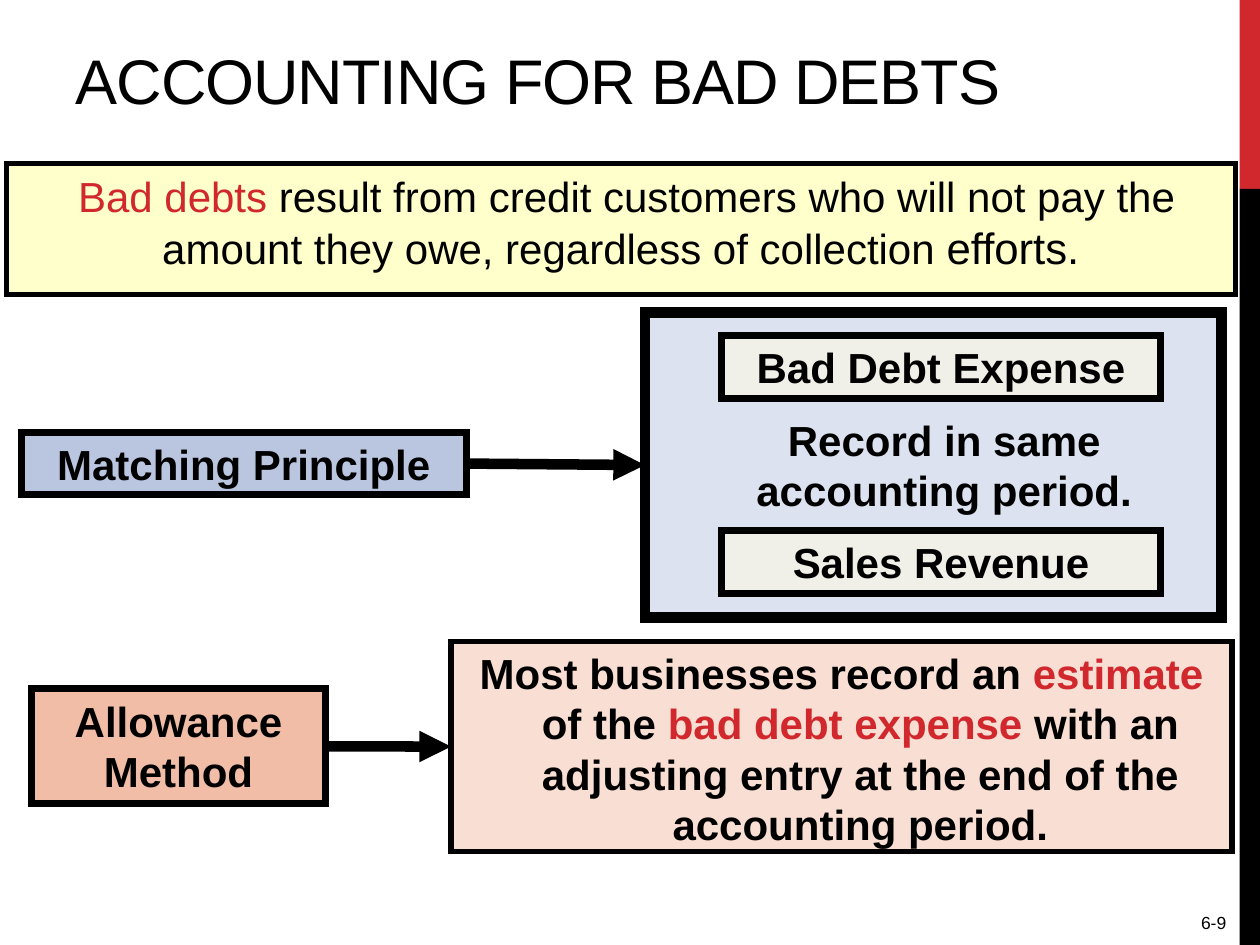
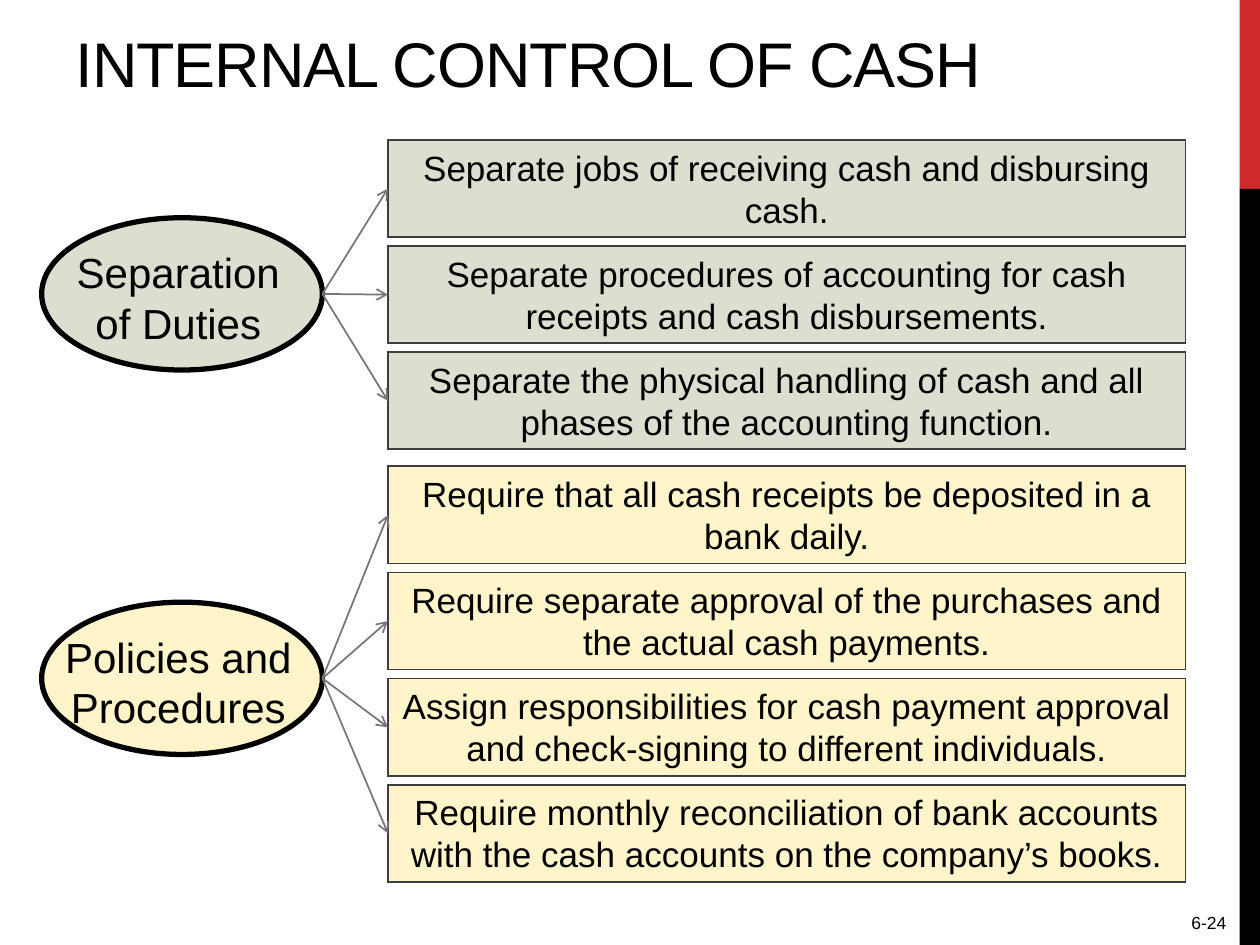
from dataclasses import dataclass

from lxml.etree import SubElement
from pptx import Presentation
from pptx.dml.color import RGBColor
from pptx.enum.shapes import MSO_CONNECTOR as Link, MSO_SHAPE as Kind
from pptx.enum.text import MSO_ANCHOR as Anchor, MSO_AUTO_SIZE as Fit, PP_ALIGN as Align
from pptx.oxml.ns import qn
from pptx.util import Cm, Pt


@dataclass(frozen=True)
class Theme:
    font: str = "Arial"
    ink: str = "000000"
    accent: str = "D1282E"
    outline: str = "3D3D3D"
    arrow: str = "777777"
    definition: str = "FFFFCC"
    panel: str = "DCE2EF"
    principle: str = "BAC5DF"
    account: str = "F0F0E9"
    allowance: str = "F1BDA7"
    estimate: str = "F8DED3"
    duties: str = "DEDED0"
    policies: str = "FFF4CA"
    title_size: int = 36
    label_size: int = 24
    emphasis_size: int = 25
    row_size: int = 20
    number_size: int = 10


THEME = Theme()
PAGE_SIZE = (25.4, 19.05)
BAND_LEFT, BAND_SPLIT = 24.99, 3.81
NUMBER_AREA = (20.32, 18.26, 4.65, 0.79)

DEBTS_TITLE = "ACCOUNTING FOR BAD DEBTS"
DEFINITION_AREA = (0.13, 3.3, 24.77, 2.64)
DEFINITION = [
    (" Bad debts ", THEME.accent, THEME.label_size),
    ("result from credit customers who will not pay the amount they owe, regardless of collection ",
     THEME.ink, THEME.label_size),
    ("efforts.", THEME.ink, THEME.emphasis_size),
]
DEBT_BOXES = {
    "panel": ("", (13, 6.3, 11.63, 6.15), THEME.panel, 6),
    "principle": ("Matching Principle", (0.43, 8.71, 8.97, 1.27), THEME.principle, 4),
    "expense": ("Bad Debt Expense", (14.55, 6.76, 8.84, 1.27), THEME.account, 4),
    "revenue": ("Sales Revenue", (14.55, 10.69, 8.84, 1.27), THEME.account, 4),
    "period": ("Record in same accounting period.", (13.94, 8.23, 10.19, 2.31), THEME.panel, 0),
    "allowance": ("Allowance Method", (0.64, 13.89, 5.92, 2.31), THEME.allowance, 4),
    "estimate": ("", (9.09, 12.93, 15.75, 4.24), THEME.estimate, 3),
}
ESTIMATE = [
    ("Most businesses record an ", THEME.ink),
    ("estimate", THEME.accent),
    (" of the", THEME.ink),
    (" bad debt expense ", THEME.accent),
    ("with an adjusting entry at the end of the accounting period.", THEME.ink),
]
DEBT_ARROWS = [("principle", "panel"), ("allowance", "estimate")]

CASH_TITLE = "INTERNAL CONTROL OF CASH"
CONTROLS = [
    ("Separation\nof Duties", THEME.duties, 4.39, 2.82, [
        "Separate jobs of receiving cash and disbursing cash.",
        "Separate procedures of accounting for cash receipts and cash disbursements.",
        "Separate the physical handling of cash and all phases of the accounting function.",
    ]),
    ("Policies and Procedures", THEME.policies, 12.14, 9.4, [
        "Require that all cash receipts be deposited in a bank daily.",
        "Require separate approval of the purchases and the actual cash payments.",
        "Assign responsibilities for cash payment approval and check-signing to different individuals.",
        "Require monthly reconciliation of bank accounts with the cash accounts on the company’s books.",
    ]),
]
OVAL_LEFT, OVAL_WIDTH, OVAL_HEIGHT = 0.84, 5.66, 3.07
LABEL_DROP, LABEL_WIDTH, LABEL_HEIGHT = 0.46, 5.51, 2.31
ROW_LEFT, ROW_WIDTH, ROW_HEIGHT, ROW_PITCH = 7.82, 16.08, 1.96, 2.14


def lengths(area):
    return [Cm(value) for value in area]


def move(shape, area):
    shape.left, shape.top, shape.width, shape.height = lengths(area)


def add_span(para, text, size, color=THEME.ink, bold=False):
    for number, line in enumerate(text.split("\n")):
        if number:
            para.add_line_break()
        span = para.add_run()
        span.text = line
        span.font.name = THEME.font
        span.font.size = Pt(size)
        span.font.bold = bold
        span.font.color.rgb = RGBColor.from_string(color)
    return span


def prepare_text(shape, align=Align.CENTER, anchor=Anchor.TOP):
    frame = shape.text_frame
    frame.word_wrap = True
    frame.auto_size = Fit.NONE
    frame.vertical_anchor = anchor
    para = frame.paragraphs[0]
    para.alignment = align
    para.space_before = Pt(0)
    return para


def paint(shape, fill, line_width=0, line_color=THEME.ink):
    shape.fill.solid()
    shape.fill.fore_color.rgb = RGBColor.from_string(fill)
    if line_width:
        shape.line.color.rgb = RGBColor.from_string(line_color)
        shape.line.width = Pt(line_width)
        SubElement(shape.line._get_or_add_ln(), qn("a:miter"), lim="800000")
    else:
        shape.line.fill.background()


def add_box(page, area, fill, line_width=0, line_color=THEME.ink, kind=Kind.RECTANGLE):
    box = page.shapes.add_shape(kind, *lengths(area))
    box.shadow.inherit = False
    paint(box, fill, line_width, line_color)
    return box


def add_label(page, area, text, size, align=Align.CENTER):
    label = page.shapes.add_textbox(*lengths(area))
    add_span(prepare_text(label, align), text, size)


def add_arrow(page, start, target, color, width, head):
    arrow = page.shapes.add_connector(Link.STRAIGHT, *start, *start)
    arrow.end_connect(target, 1)
    arrow.line.color.rgb = RGBColor.from_string(color)
    arrow.line.width = Pt(width)
    SubElement(arrow.line._get_or_add_ln(), qn("a:tailEnd"), type=head)
    SubElement(arrow._element.spPr, qn("a:effectLst"))
    return arrow


def add_page(deck, layout, title, title_top, number):
    page = deck.slides.add_slide(deck.slide_layouts.get_by_name(layout))
    width, height = PAGE_SIZE
    band_width = width - BAND_LEFT
    add_box(page, (BAND_LEFT, 0, band_width, BAND_SPLIT), THEME.accent)
    add_box(page, (BAND_LEFT, BAND_SPLIT, band_width, height - BAND_SPLIT), THEME.ink)
    heading = page.shapes.title
    move(heading, (1.27, title_top, 23.29, 2.11))
    span = add_span(prepare_text(heading, Align.LEFT, Anchor.BOTTOM), title, THEME.title_size)
    span.font._element.set("spc", "-60")
    add_label(page, NUMBER_AREA, number, THEME.number_size, Align.RIGHT)
    return page


def build_debts(deck):
    page = add_page(deck, "Title and Content", DEBTS_TITLE, 0.38, "6-9")
    definition = page.placeholders[1]
    move(definition, DEFINITION_AREA)
    paint(definition, THEME.definition, 3)
    para = prepare_text(definition)
    properties = para._p.get_or_add_pPr()
    properties.set("marL", "0")
    properties.set("indent", "0")
    SubElement(properties, qn("a:buNone"))
    for text, color, size in DEFINITION:
        add_span(para, text, size, color)

    boxes = {}
    for name, (text, area, fill, line_width) in DEBT_BOXES.items():
        boxes[name] = add_box(page, area, fill, line_width)
        if text:
            add_span(prepare_text(boxes[name]), text, THEME.label_size, bold=True)

    para = prepare_text(boxes["estimate"])
    properties = para._p.get_or_add_pPr()
    properties.set("marL", str(Cm(0.76)))
    properties.set("indent", str(-Cm(0.76)))
    for text, color in ESTIMATE:
        add_span(para, text, THEME.label_size, color, True)

    for source, target in DEBT_ARROWS:
        box = boxes[source]
        start = (box.left + box.width, box.top + box.height // 2)
        arrow = add_arrow(page, start, boxes[target], THEME.ink, 6, "triangle")
        arrow.begin_connect(box, 3)


def build_cash(deck):
    page = add_page(deck, "Title Only", CASH_TITLE, 0.03, "6-24")
    for name, fill, oval_top, first_row, rows in CONTROLS:
        add_box(page, (OVAL_LEFT, oval_top, OVAL_WIDTH, OVAL_HEIGHT), fill, 3, kind=Kind.OVAL)
        add_label(page, (OVAL_LEFT, oval_top + LABEL_DROP, LABEL_WIDTH, LABEL_HEIGHT),
                  name, THEME.label_size)
        start = (Cm(OVAL_LEFT + OVAL_WIDTH), Cm(oval_top + OVAL_HEIGHT / 2))
        for number, text in enumerate(rows):
            area = (ROW_LEFT, first_row + number * ROW_PITCH, ROW_WIDTH, ROW_HEIGHT)
            row = add_box(page, area, fill, 1, THEME.outline)
            add_span(prepare_text(row), text, THEME.row_size)
            add_arrow(page, start, row, THEME.arrow, 1, "arrow")


def main():
    deck = Presentation()
    deck.slide_width, deck.slide_height = lengths(PAGE_SIZE)
    build_debts(deck)
    build_cash(deck)
    deck.save("out.pptx")


if __name__ == "__main__":
    main()
